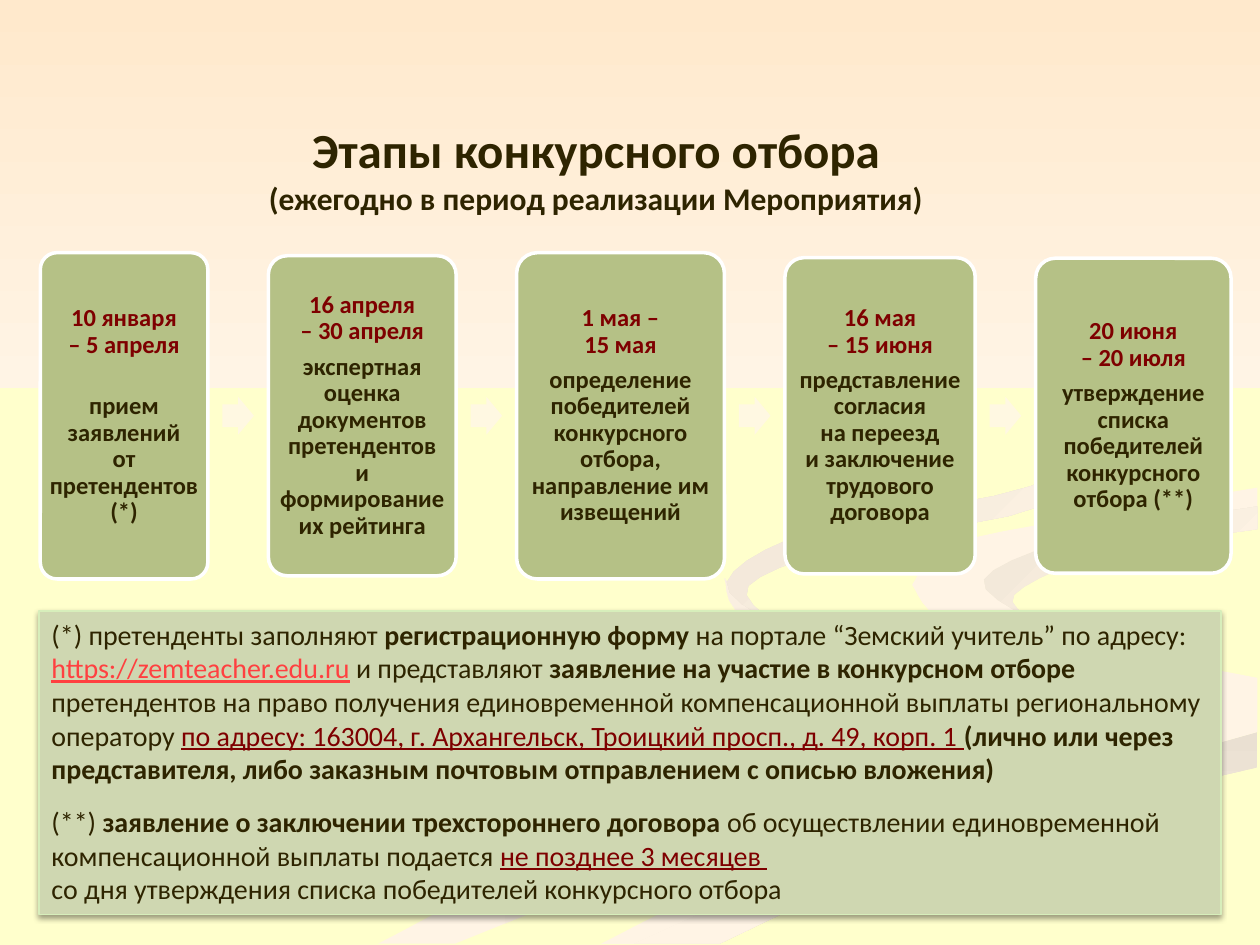
import pptx
import pptx.util
import pptx.dml.color
import pptx.enum.shapes
import pptx.enum.text
import pptx.oxml
import pptx.oxml.ns

Inches = pptx.util.Inches
Pt = pptx.util.Pt
SHAPE = pptx.enum.shapes.MSO_SHAPE
ALIGN = pptx.enum.text.PP_ALIGN
ANCHOR = pptx.enum.text.MSO_ANCHOR

FONT = "Calibri"
COLORS = {
    "page": "FFFFCC", "peach": "FFE9CC", "cream": "FFF4E5", "sand": "F5EADC",
    "dusk": "EAE0D2", "clay": "F1E7D8", "shell": "EDE3D5",
    "text": "2E2400", "date": "7E0000", "link": "FF4040",
    "step": "B5C186", "white": "FFFFFF", "arrow": "FFF8E2",
    "panel": "CFD7B1", "edge": "D7EEBB",
}

# Ribbon edges that neighbours share, as points in inches
BEND = [(7.24, 4.64), (7.45, 4.9), (8.11, 5.15), (9.05, 5.4), (9.43, 5.7)]
TAIL = [(9.43, 5.7), (9.02, 6.03), (7.43, 6.43), (5.73, 7.03), (4.77, 7.49)]
SEAM = [(5.03, 7.49), (6.3, 6.93), (7.65, 6.47), (9.98, 5.81)]
HOOK = [(8.26, 4.96), (7.81, 4.6), (8.65, 4.24), (9.98, 4.02)]

# Start colour, end colour, clockwise angle, edges in drawing order
RIBBONS = [
    ("cream", "sand", 0, [
        [(5.75, 4.59), (6.14, 4.96), (7.28, 5.35), (8, 5.81), (5.94, 6.56),
         (3.61, 7.49)],
        [(3, 7.49), (4.58, 6.74), (7.14, 6.05), (7.86, 5.66), (6.97, 5.25),
         (5.93, 4.91), (5.75, 4.59)]]),
    ("cream", "sand", 45, [
        BEND, [(9.43, 5.7), (8.94, 6.05)],
        [(8.94, 6.05), (9.18, 5.81), (8.68, 5.44), (7.66, 5.12),
         (7.24, 4.64)]]),
    ("dusk", "cream", 90, [
        SEAM, [(9.98, 6.09), (8.21, 6.51), (6.95, 6.92), (5.71, 7.49)]]),
    ("cream", "cream", 0, [
        BEND, TAIL, SEAM, [(9.98, 5.38), (9.04, 5.19), (8.26, 4.96)], HOOK,
        [(9.98, 3.87), (8.74, 4.08), (7.55, 4.32), (7.24, 4.64)]]),
    ("clay", "cream", 45, [
        HOOK, [(9.98, 4.2), (8.78, 4.39), (8.05, 4.72), (8.26, 4.96)]]),
    ("shell", "cream", 45, [
        [(7.62, 2.33), (8.64, 2.91), (8.93, 3.4), (8.25, 4.02), (6.83, 4.3),
         (5.94, 4.65), (6.22, 5)],
        [(6.22, 5), (5.77, 4.62), (6.49, 4.2), (8.18, 3.86), (8.89, 3.35),
         (8.46, 2.79), (7.62, 2.33)]]),
]

TITLE = [("Этапы конкурсного отбора\n", 28),
         ("(ежегодно в период реализации Мероприятия)", 18)]

# Width, height, dates, gap after the dates in points, task
STEPS = [
    (1.33, 2.59, "10 января\n– 5 апреля", 20,
     "прием заявлений\nот претендентов (*)"),
    (1.49, 2.54, "16 апреля\n– 30 апреля", 5,
     "экспертная оценка документов претендентов\nи формирование их рейтинга"),
    (1.65, 2.59, "1 мая –\n15 мая", 5,
     "определение победителей конкурсного отбора, направление им извещений"),
    (1.51, 2.51, "16 мая\n– 15 июня", 5,
     "представление\nсогласия\nна переезд\nи заключение трудового договора"),
    (1.55, 2.5, "20 июня\n– 20 июля", 5,
     "утверждение списка победителей конкурсного отбора (**)"),
]
LEFT, MIDDLE, GAP = 0.32, 3.3, 0.48
ARROW_W, ARROW_H = 0.25, 0.3

# Text, colour, bold, underline
NOTES = [
    [("(*) претенденты заполняют ", "text", False, False),
     ("регистрационную форму ", "text", True, False),
     ("на портале “Земский учитель” по адресу: ", "text", False, False),
     ("https://zemteacher.edu.ru", "link", False, True),
     (" и представляют ", "text", False, False),
     ("заявление на участие в конкурсном отборе ", "text", True, False),
     ("претендентов на право получения единовременной компенсационной "
      "выплаты региональному оператору ", "text", False, False),
     ("по адресу: 163004, г. Архангельск, Троицкий просп., д. 49, корп. 1 ",
      "date", False, True),
     ("(лично или через представителя, либо заказным почтовым отправлением "
      "с описью вложения)", "text", True, False)],
    [("(**) ", "text", False, False),
     ("заявление о заключении трехстороннего договора", "text", True, False),
     (" об осуществлении единовременной компенсационной выплаты подается ",
      "text", False, False),
     ("не позднее 3 месяцев \n", "date", False, True),
     ("со дня утверждения списка победителей конкурсного отбора",
      "text", False, False)],
]
SHADOW = """<a:effectLst xmlns:a="http://schemas.openxmlformats.org/drawingml/2006/main">
<a:outerShdw blurRad="39370" dist="20320" dir="5400000" rotWithShape="0">
<a:srgbClr val="000000"><a:alpha val="38000"/></a:srgbClr></a:outerShdw></a:effectLst>"""


def color(name):
    return pptx.dml.color.RGBColor.from_string(COLORS[name])


def paint(shape, fill, line=None, width=0):
    shape.shadow.inherit = False
    shape.fill.solid()
    shape.fill.fore_color.rgb = color(fill)
    if line:
        shape.line.color.rgb = color(line)
        shape.line.width = Pt(width)
    else:
        shape.line.fill.background()


def shade(shape, start, end, angle):
    """Fill with a two-colour gradient; the angle runs clockwise."""
    paint(shape, start)
    if start != end:
        shape.fill.gradient()
        shape.fill.gradient_angle = 360 - angle
        for stop, name in zip(shape.fill.gradient_stops, (start, end)):
            stop.color.rgb = color(name)


def write(para, text, size, name="text", bold=True, under=False):
    """Add runs, with a line break at each newline."""
    for i, part in enumerate(text.split("\n")):
        if i:
            para.add_line_break()
        if part:
            run = para.add_run()
            run.text = part
            font = run.font
            font.name, font.size = FONT, Pt(size)
            font.bold, font.underline = bold, under
            font.color.rgb = color(name)


def add_shape(slide, kind, *box):
    return slide.shapes.add_shape(kind, *[Inches(v) for v in box])


def curve(edge, parts=5):
    """Run a Catmull-Rom curve through the points of an edge."""
    ends = [edge[0]] + edge + [edge[-1]]
    points = [edge[0]]
    for quad in zip(ends, ends[1:], ends[2:], ends[3:]):
        for k in range(1, parts + 1):
            t = k / parts
            points.append(tuple(
                b + t * (c - a + t * (2 * a - 5 * b + 4 * c - d
                                      + t * (3 * b - a - 3 * c + d))) / 2
                for a, b, c, d in zip(*quad)))
    return points


def add_scene(slide):
    for start, end, angle, edges in RIBBONS:
        points = [(Inches(x), Inches(y)) for e in edges for x, y in curve(e)]
        pen = slide.shapes.build_freeform(*points[0])
        pen.add_line_segments(points[1:], close=True)
        shade(pen.convert_to_shape(), start, end, angle)
    band = add_shape(slide, SHAPE.RECTANGLE, 0, 0, 10, 3.08)
    shade(band, "peach", "cream", 90)


def add_title(slide):
    title = slide.shapes.title
    title.left, title.top = Inches(0.23), Inches(0.55)
    title.width, title.height = Inches(9), Inches(1.57)
    title.text_frame.vertical_anchor = ANCHOR.MIDDLE
    para = title.text_frame.paragraphs[0]
    para.alignment = ALIGN.CENTER
    for text, size in TITLE:
        write(para, text, size)
    slide.shapes._spTree.append(title._element)  # in front of the band


def add_steps(slide):
    x = LEFT
    for i, (width, height, dates, space, task) in enumerate(STEPS):
        if i:
            arrow = add_shape(slide, SHAPE.RIGHT_ARROW,
                              x - (GAP + ARROW_W) / 2, MIDDLE - ARROW_H / 2,
                              ARROW_W, ARROW_H)
            arrow.adjustments[0] = 0.6
            paint(arrow, "arrow")
        card = add_shape(slide, SHAPE.ROUNDED_RECTANGLE,
                         x, MIDDLE - height / 2, width, height)
        card.adjustments[0] = 0.1
        paint(card, "step", "white", 2)
        frame = card.text_frame
        frame.word_wrap = True
        frame.vertical_anchor = ANCHOR.MIDDLE
        frame.margin_left = frame.margin_right = Inches(0.02)
        frame.margin_top = frame.margin_bottom = Inches(0.02)
        first, second = frame.paragraphs[0], frame.add_paragraph()
        write(first, dates, 14, "date")
        write(second, task, 14)
        for para, after in ((first, space), (second, 5)):
            para.alignment = ALIGN.CENTER
            para.line_spacing = 0.9
            para.space_after = Pt(after)
        x += width + GAP


def add_notes(slide):
    panel = add_shape(slide, SHAPE.RECTANGLE, 0.31, 4.85, 9.38, 2.41)
    paint(panel, "panel", "edge", 0.75)
    props = panel._element.spPr
    props.replace(props.find(pptx.oxml.ns.qn("a:effectLst")),
                  pptx.oxml.parse_xml(SHADOW))
    frame = panel.text_frame
    frame.word_wrap = True
    frame.vertical_anchor = ANCHOR.TOP
    for i, runs in enumerate(NOTES):
        para = frame.add_paragraph() if i else frame.paragraphs[0]
        para.alignment = ALIGN.LEFT
        if i:
            para.space_before = Pt(11)
        for text, name, bold, under in runs:
            write(para, text, 16, name, bold, under)


def main():
    deck = pptx.Presentation()
    deck.slide_width, deck.slide_height = Inches(10), Inches(7.5)
    slide = deck.slides.add_slide(deck.slide_layouts[5])
    slide.background.fill.solid()
    slide.background.fill.fore_color.rgb = color("page")
    for build in (add_scene, add_title, add_steps, add_notes):
        build(slide)
    deck.save("out.pptx")


if __name__ == "__main__":
    main()
